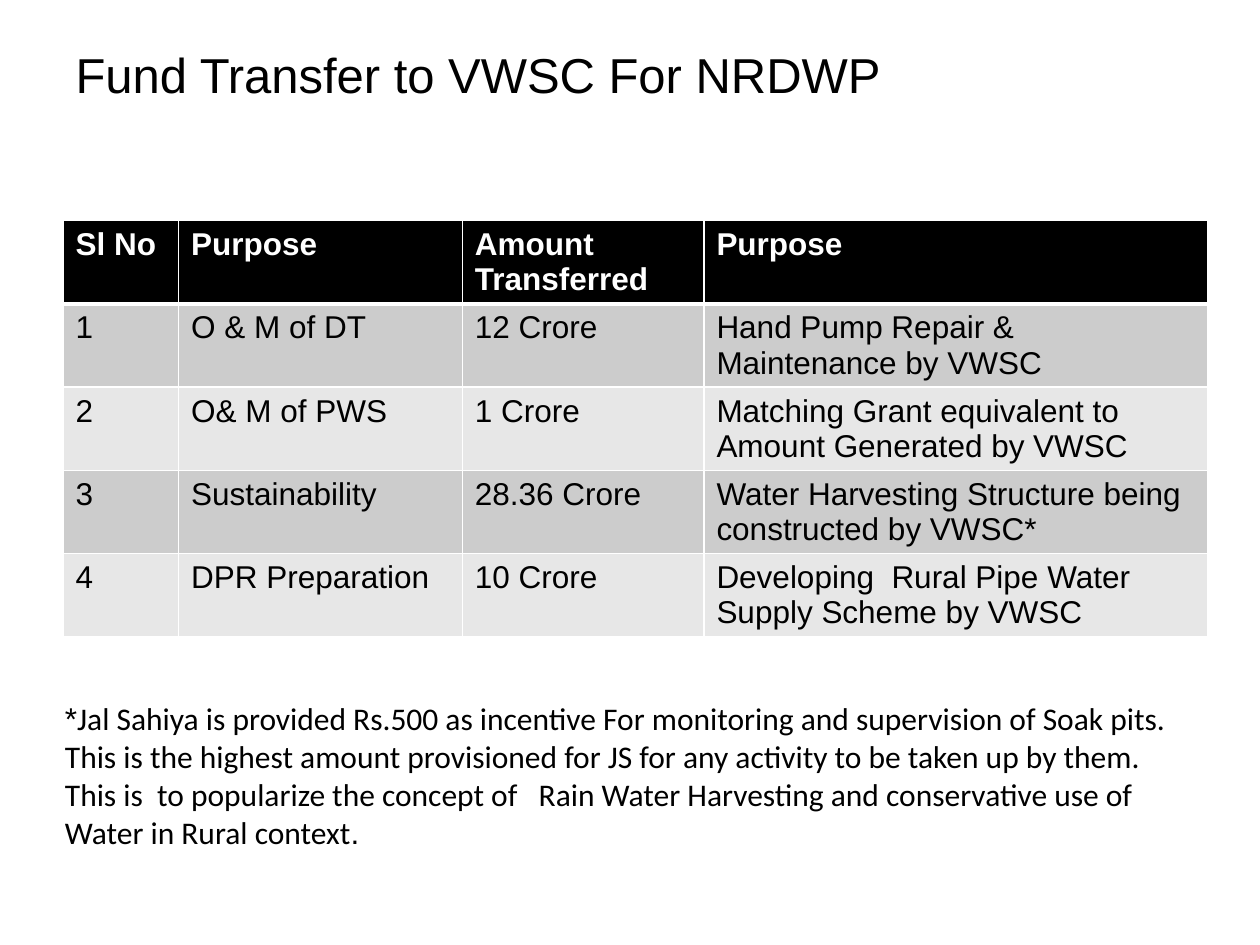
from dataclasses import dataclass

from lxml.etree import SubElement
from pptx import Presentation
from pptx.dml.color import RGBColor
from pptx.enum.shapes import MSO_SHAPE
from pptx.enum.text import MSO_ANCHOR, MSO_AUTO_SIZE, PP_ALIGN
from pptx.oxml.ns import qn
from pptx.util import Cm, Pt


@dataclass(frozen=True)
class Theme:
    heading_font: str = "Arial"
    note_font: str = "Calibri"
    title_size: int = 28
    body_size: int = 18
    ink: str = "000000"
    paper: str = "FFFFFF"
    bands: tuple = ("CCCCCC", "E7E7E7")
    thin_line: int = 1
    thick_line: int = 3


THEME = Theme()
TITLE = "Fund Transfer to VWSC For NRDWP"
COLUMN_WIDTHS = (2.33, 5.72, 4.87, 10.16)
ROWS = (
    ("Sl No", "Purpose", "Amount Transferred", "Purpose"),
    ("1", "O & M of DT", "12 Crore", "Hand Pump Repair & Maintenance by VWSC"),
    ("2", "O& M of PWS", "1 Crore",
     "Matching Grant equivalent to Amount Generated by VWSC"),
    ("3", "Sustainability", "28.36 Crore",
     "Water Harvesting Structure being constructed by VWSC*"),
    ("4", "DPR Preparation", "10 Crore",
     "Developing  Rural Pipe Water Supply Scheme by VWSC"),
)
NOTE_RUNS = (
    ("*", THEME.heading_font),
    ("Jal Sahiya is provided Rs.500 as incentive For monitoring and supervision "
     "of Soak pits. This is the highest amount provisioned for JS for any "
     "activity to be taken up by them. This is  to popularize the concept of   "
     "Rain Water Harvesting and conservative use of Water in Rural context",
     THEME.note_font),
    (".", THEME.heading_font),
)


def format_font(font, name, size, color, bold=False):
    font.name = name
    font.size = Pt(size)
    font.bold = bold
    font.color.rgb = RGBColor.from_string(color)


def place_title(slide, left, top, width, height):
    title = slide.shapes.title
    title.left, title.top, title.width, title.height = left, top, width, height
    frame = title.text_frame
    frame.text = TITLE
    frame.auto_size = MSO_AUTO_SIZE.NONE
    frame.vertical_anchor = MSO_ANCHOR.TOP
    paragraph = frame.paragraphs[0]
    paragraph.alignment = PP_ALIGN.LEFT
    format_font(paragraph.runs[0].font, THEME.heading_font, THEME.title_size, THEME.ink)


def add_borders(cell, top, bottom):
    """Draw the four cell borders; call before setting the cell's fill."""
    properties = cell._tc.get_or_add_tcPr()
    widths = {"L": THEME.thin_line, "R": THEME.thin_line, "T": top, "B": bottom}
    for side, width in widths.items():
        line = SubElement(properties, qn(f"a:ln{side}"), w=str(Pt(width)))
        fill = SubElement(line, qn("a:solidFill"))
        SubElement(fill, qn("a:srgbClr"), val=THEME.paper)


def add_fund_table(slide, left, top, row_height):
    table = slide.shapes.add_table(
        len(ROWS), len(COLUMN_WIDTHS), left, top,
        Cm(sum(COLUMN_WIDTHS)), row_height * len(ROWS)).table
    for column, width in zip(table.columns, COLUMN_WIDTHS):
        column.width = Cm(width)
    for row_index, row in enumerate(ROWS):
        is_header = row_index == 0
        fill = THEME.ink if is_header else THEME.bands[(row_index - 1) % 2]
        top_line = THEME.thick_line if row_index == 1 else THEME.thin_line
        bottom_line = THEME.thick_line if is_header else THEME.thin_line
        for column_index, text in enumerate(row):
            cell = table.cell(row_index, column_index)
            add_borders(cell, top_line, bottom_line)
            cell.fill.solid()
            cell.fill.fore_color.rgb = RGBColor.from_string(fill)
            cell.text_frame.text = text
            format_font(cell.text_frame.paragraphs[0].runs[0].font,
                        THEME.heading_font, THEME.body_size,
                        THEME.paper if is_header else THEME.ink, is_header)


def add_note(slide, left, top, width, height):
    note = slide.shapes.add_shape(MSO_SHAPE.RECTANGLE, left, top, width, height)
    note.shadow.inherit = False
    note.fill.solid()
    note.fill.fore_color.rgb = RGBColor.from_string(THEME.paper)
    note.line.fill.background()
    frame = note.text_frame
    frame.word_wrap = True
    frame.auto_size = MSO_AUTO_SIZE.SHAPE_TO_FIT_TEXT
    frame.vertical_anchor = MSO_ANCHOR.TOP
    paragraph = frame.paragraphs[0]
    paragraph.alignment = PP_ALIGN.LEFT
    for text, font_name in NOTE_RUNS:
        run = paragraph.add_run()
        run.text = text
        format_font(run.font, font_name, THEME.body_size, THEME.ink)


def main():
    presentation = Presentation()
    presentation.slide_width = Cm(25.4)
    presentation.slide_height = Cm(19.05)
    slide = presentation.slides.add_slide(presentation.slide_layouts[5])
    place_title(slide, Cm(1.27), Cm(0.76), Cm(22.86), Cm(3.18))
    add_fund_table(slide, Cm(1.27), Cm(4.45), Cm(1.67))
    add_note(slide, Cm(1.06), Cm(13.97), Cm(22.86), Cm(3.33))
    presentation.save("out.pptx")


if __name__ == "__main__":
    main()
